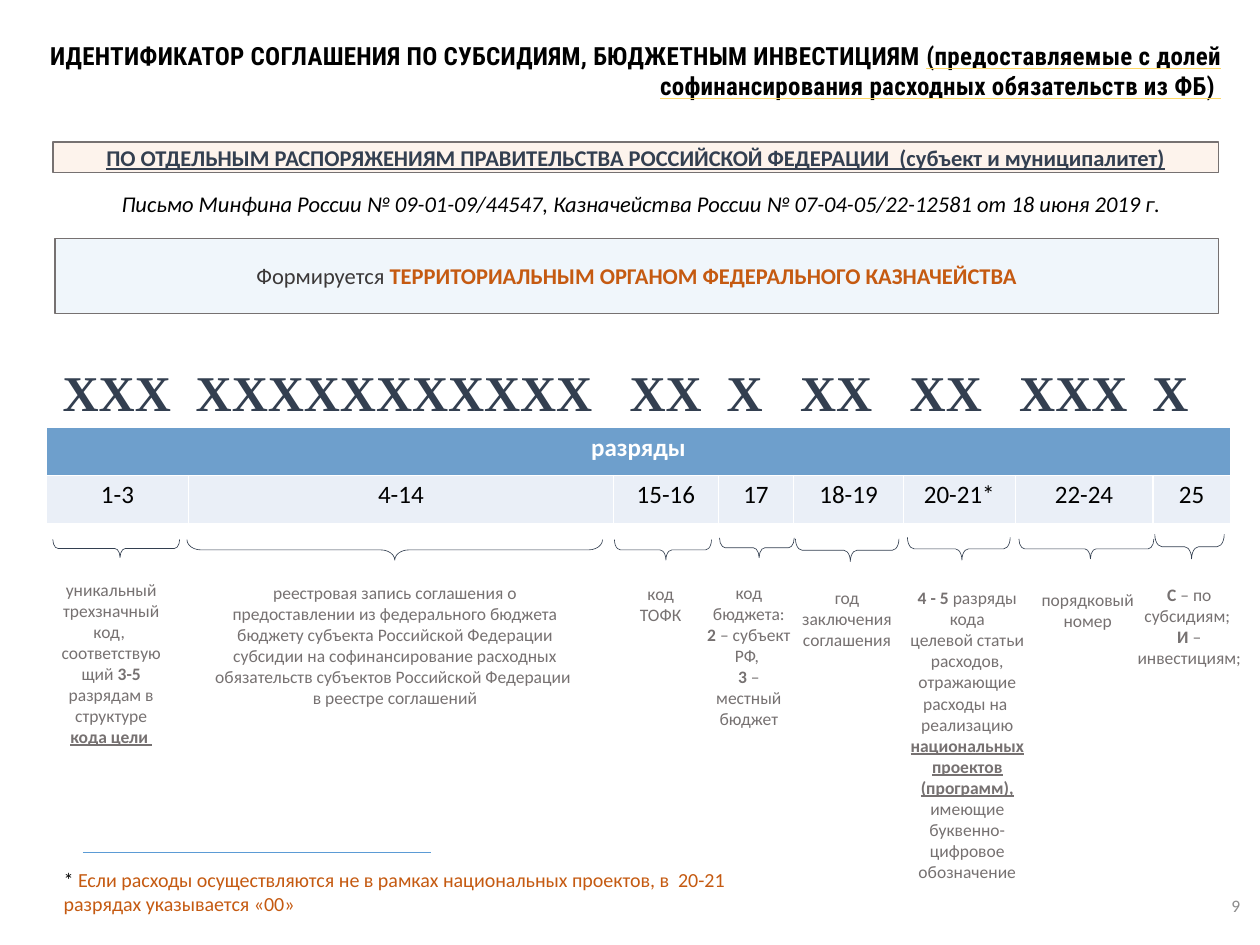
from lxml.etree import SubElement
from pptx import Presentation
from pptx.dml.color import RGBColor
from pptx.enum.shapes import MSO_CONNECTOR, MSO_SHAPE
from pptx.enum.text import MSO_ANCHOR, MSO_AUTO_SIZE, PP_ALIGN
from pptx.oxml.ns import qn
from pptx.util import Cm, Pt


class Theme:
    body, head, code = "Calibri", "Roboto Condensed", "Times New Roman"
    small, note, text, large, huge = Pt(14), Pt(16), Pt(18), Pt(20), Pt(40)
    black, white = RGBColor(0, 0, 0), RGBColor(255, 255, 255)
    navy = RGBColor.from_string("333F50")
    gray = RGBColor.from_string("767171")
    dark = RGBColor.from_string("3B3838")
    pale = RGBColor.from_string("8C8C8C")
    rust = RGBColor.from_string("C55A11")
    blue = RGBColor.from_string("2E75B6")
    line = RGBColor.from_string("5B9BD5")
    row = RGBColor.from_string("EAEFF7")
    sky = RGBColor.from_string("DEEBF7")
    peach = RGBColor.from_string("FBE5D6")
    gold = "FFD966"


def write(frame, paras, size, color, align=PP_ALIGN.CENTER, face=Theme.body, side=0.3):
    frame.word_wrap = True
    frame.margin_left = frame.margin_right = Cm(side)
    frame.margin_top = frame.margin_bottom = Cm(0.15)
    for i, runs in enumerate(paras):
        para = frame.add_paragraph() if i else frame.paragraphs[0]
        para.alignment = align
        para.font.name, para.font.size = face, size
        para.font.color.rgb = color
        for text, style, *hue in runs:
            if text == "\n":
                para.add_line_break()
                continue
            run = para.add_run()
            run.text = text
            run.font.bold = "b" in style
            run.font.italic = "i" in style
            run.font.underline = "u" in style
            if hue:
                run.font.color.rgb = hue[0]


def fade(node, share):
    tint = next(node.iter(qn("a:srgbClr")))
    SubElement(tint, qn("a:alpha")).set("val", str(share * 1000))


deck = Presentation()
deck.slide_width, deck.slide_height = Cm(35.56), Cm(26.67)
slide = deck.slides.add_slide(deck.slide_layouts[6])
shapes = slide.shapes

panels = [
    (1.5, 4.01, 32.89, 0.86, Theme.peach, Theme.navy,
     [("ПО ОТДЕЛЬНЫМ РАСПОРЯЖЕНИЯМ ПРАВИТЕЛЬСТВА РОССИЙСКОЙ ФЕДЕРАЦИИ  (субъект и муниципалитет)", "bu")]),
    (1.55, 6.73, 32.84, 2.11, Theme.sky, Theme.dark,
     [("Формируется ", ""),
      ("ТЕРРИТОРИАЛЬНЫМ ОРГАНОМ ФЕДЕРАЛЬНОГО КАЗНАЧЕЙСТВА", "b", Theme.rust)]),
]
for x, y, w, h, back, color, runs in panels:
    panel = shapes.add_shape(MSO_SHAPE.RECTANGLE, Cm(x), Cm(y), Cm(w), Cm(h))
    panel.shadow.inherit = False
    panel.fill.solid()
    panel.fill.fore_color.rgb = back
    fade(panel.fill._xPr, 44)
    panel.line.color.rgb, panel.line.width = Theme.gray, Pt(1)
    panel.text_frame.vertical_anchor = MSO_ANCHOR.MIDDLE
    write(panel.text_frame, [runs], Theme.text, color)

left, mid, right = PP_ALIGN.LEFT, PP_ALIGN.CENTER, PP_ALIGN.RIGHT
labels = [
    (0.84, 1.02, 33.88, 1.96, Theme.large, Theme.black, right, Theme.head, 0.25,
     [[("ИДЕНТИФИКАТОР СОГЛАШЕНИЯ ПО СУБСИДИЯМ, БЮДЖЕТНЫМ ИНВЕСТИЦИЯМ ", "b"),
       ("(предоставляемые с долей софинансирования расходных обязательств из ФБ) ", "bu")]]),
    (3.18, 5.21, 29.95, 1.02, Theme.text, Theme.black, left, Theme.body, 0.25,
     [[("Письмо Минфина России № 09-01-09/44547, Казначейства России № 07-04-05/22-12581 от 18 июня 2019 г.", "i")]]),
    (1.47, 10.06, 32.92, 2.01, Theme.huge, Theme.navy, left, Theme.code, 0.3,
     [[("ХХХ  ХХХХХХХХХХХ   ХХ  Х   ХХ   ХХ   ХХХ  Х", "b")]]),
    (1.55, 24.33, 19.76, 1.63, Theme.note, Theme.rust, left, Theme.body, 0.25,
     [[("* ", "", Theme.black),
       ("Если расходы осуществляются не в рамках национальных проектов, в  20-21 разрядах указывается «00»", "")]]),
    (27.3, 25.1, 8, 1.42, Theme.small, Theme.pale, right, Theme.body, 0.3, [[("9", "")]]),
]
notes = [
    (1.5, 16.18, 3.28, 5.69, 0.1,
     [[("уникальный трехзначный код,  соответствующий ", ""), ("3-5", "b"),
       (" разрядам в структуре ", ""), ("кода цели ", "bu")]]),
    (5.97, 16.28, 10.36, 3.89, 0.1,
     [[("реестровая запись соглашения о предоставлении из федерального бюджета бюджету субъекта Российской Федерации субсидии на софинансирование расходных обязательств субъектов Российской Федерации  в реестре соглашений", "")]]),
    (17.35, 16.31, 2.59, 1.5, 0.3, [[("код ТОФК", "")]]),
    (19.84, 16.28, 2.59, 4.5, 0.1,
     [[("код бюджета:", "")], [("2", "b"), (" – субъект РФ, ", "")],
      [("3", "b"), (" – местный бюджет", "")]]),
    (22.43, 16.41, 2.95, 2.11, 0.1, [[("год заключения соглашения", "")]]),
    (25.37, 16.43, 3.86, 8.69, 0.3,
     [[("4 - 5 ", "b"), ("разряды кода", "")],
      [("целевой статьи расходов, отражающие расходы на  реализацию ", ""),
       ("национальных проектов (программ), ", "bu"),
       ("имеющие буквенно-цифровое обозначение", "")]]),
    (29.24, 16.48, 2.92, 2.11, 0.1, [[("порядковый", "")], [("номер", "")]]),
    (31.85, 16.33, 3.43, 2.69, 0.1,
     [[("С", "b"), (" – по субсидиям; ", ""), ("\n", ""),
       ("И", "b"), (" – инвестициям;", "")]]),
]
for x, y, w, h, side, paras in notes:
    labels.append((x, y, w, h, Theme.small, Theme.gray, mid, Theme.body, side, paras))

boxes = []
for x, y, w, h, size, color, align, face, side, paras in labels:
    box = shapes.add_textbox(Cm(x), Cm(y), Cm(w), Cm(h))
    write(box.text_frame, paras, size, color, align, face, side)
    box.text_frame.auto_size = MSO_AUTO_SIZE.SHAPE_TO_FIT_TEXT
    boxes.append(box)

title = boxes[0].text_frame
title.margin_top = title.margin_bottom = Cm(0.13)
for run in title.paragraphs[0].runs:
    run.font._element.set("spc", "20")
under = SubElement(run.font._element, qn("a:uFill"))
paint = SubElement(under, qn("a:solidFill"))
SubElement(paint, qn("a:srgbClr")).set("val", Theme.gold)

ranks = ["1-3", "4-14", "15-16", "17", "18-19", "20-21*", "22-24", "25"]
widths = [3.99, 12.01, 2.95, 2.13, 3.1, 3.15, 3.89, 2.18]
table = shapes.add_table(2, len(ranks), Cm(1.32), Cm(12.07), Cm(sum(widths)), Cm(2.7)).table
table.cell(0, 0).merge(table.cell(0, len(ranks) - 1))
for col, width in zip(table.columns, widths):
    col.width = Cm(width)
cells = [(table.cell(0, 0), "разряды", "b", Theme.white, Theme.blue)]
for i, rank in enumerate(ranks):
    cells.append((table.cell(1, i), rank, "", Theme.black, Theme.row))
for cell, text, style, color, back in cells:
    write(cell.text_frame, [[(text, style)]], Theme.large, color)
    cell.margin_left = cell.margin_right = Cm(0.25)
    cell.margin_top = cell.margin_bottom = Cm(0.13)
    cell.fill.solid()
    cell.fill.fore_color.rgb = back
fade(table.cell(0, 0)._tc.tcPr, 69)

braces = [
    (3.28, 15.48, 3.58, 0.51), (11.14, 15.52, 11.73, 0.58),
    (18.71, 15.52, 2.74, 0.58), (21.36, 15.46, 2.11, 0.56),
    (23.91, 15.53, 2.92, 0.64), (27.06, 15.49, 2.9, 0.64),
    (30.66, 15.49, 3.81, 0.56), (33.57, 15.43, 1.96, 0.69),
]
for x, y, span, deep in braces:
    brace = shapes.add_shape(MSO_SHAPE.RIGHT_BRACE, Cm(x - deep / 2), Cm(y - span / 2), Cm(deep), Cm(span))
    brace.rotation = 90
    brace.shadow.inherit = False
    brace.fill.background()
    brace.line.color.rgb, brace.line.width = Theme.navy, Pt(0.5)
    brace.adjustments[0] = 0.68 if span > 10 else 0.29
    brace.adjustments[1] = 0.5 if span > 10 else 0.47

rule = shapes.add_connector(MSO_CONNECTOR.STRAIGHT, Cm(2.34), Cm(24.05), Cm(12.17), Cm(24.05))
rule.line.color.rgb, rule.line.width = Theme.line, Pt(0.5)
SubElement(rule._element.spPr, qn("a:effectLst"))

deck.save("out.pptx")
